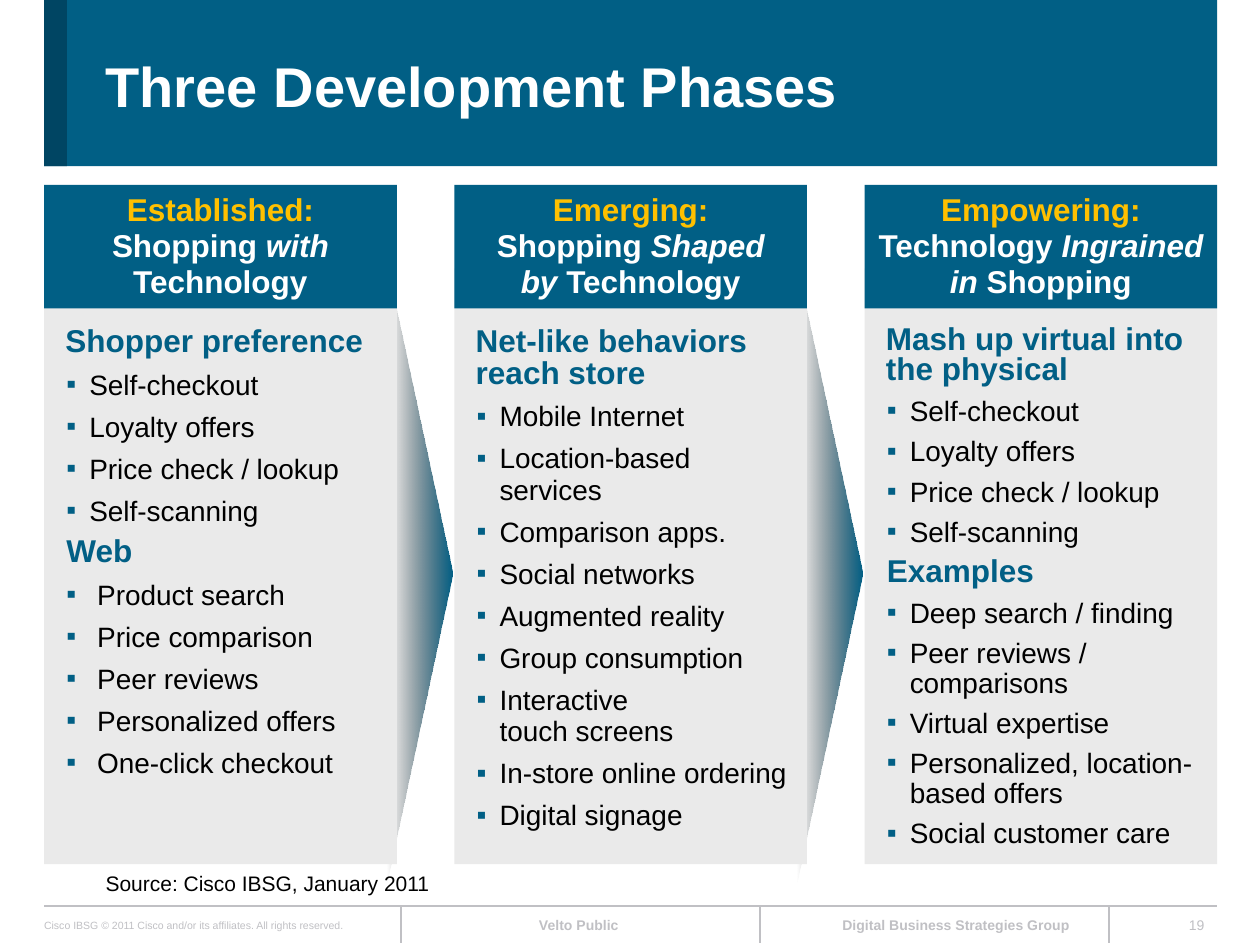
from dataclasses import dataclass

from lxml.etree import SubElement
from pptx import Presentation
from pptx.dml.color import RGBColor
from pptx.enum.shapes import MSO_CONNECTOR as Connector, MSO_SHAPE as Shape
from pptx.enum.text import MSO_ANCHOR as Anchor, MSO_AUTO_SIZE as AutoSize, PP_ALIGN as Align
from pptx.oxml.ns import qn
from pptx.util import Cm, Pt


@dataclass(frozen=True)
class Theme:
    font: str = "Arial"
    blue: str = "015F85"
    navy: str = "004563"
    panel: str = "EAEAEA"
    gold: str = "FFC000"
    white: str = "FFFFFF"
    black: str = "000000"
    grey: str = "C0C0C4"
    title_size: int = 32
    heading_size: int = 18
    item_size: int = 16
    source_size: int = 12
    footer_size: int = 8
    legal_size: int = 6


THEME = Theme()

# Column grid, in centimetres
LEFT, FULL_WIDTH = 0.89, 23.65
COLUMN_WIDTH, PITCH = 7.11, 8.27
HEAD_TOP, HEAD_HEIGHT = 3.73, 2.49
PANEL_TOP, PANEL_HEIGHT = 5.41, 12.01
HANGING = 0.46
LIST_INSETS = (0.23, 0.1, 0.23, 0.1)
HEAD_INSETS = (0.23, 0.25, 0.23, 0.1)
NO_INSETS = (0, 0, 0, 0)

# Each phase: heading runs (text, colour, italic), heading width, list height,
# line pitch in points, and groups of (subheading, text indent, items)
SHOPPER_ITEMS = ["Self-checkout", "Loyalty offers", "Price check / lookup", "Self-scanning"]
PHASES = [
    ([("Established: ", THEME.gold, False), ("Shopping ", THEME.white, False),
      ("with ", THEME.white, True), ("Technology", THEME.white, False)],
     7.09, 9.42, 18,
     [("Shopper preference", 0.48, SHOPPER_ITEMS),
      ("Web", 0.64, ["Product search", "Price comparison", "Peer reviews",
                     "Personalized offers", "One-click checkout"])]),
    ([("Emerging:", THEME.gold, False), (" Shopping ", THEME.white, False),
      ("Shaped by ", THEME.white, True), ("Technology", THEME.white, False)],
     6.58, 10.49, 18,
     [("Net-like behaviors reach store", 0.48,
       ["Mobile Internet", "Location-based\nservices", "Comparison apps.",
        "Social networks", "Augmented reality", "Group consumption",
        "Interactive\ntouch screens", "In-store online ordering", "Digital signage"])]),
    ([("Empowering: ", THEME.gold, False), ("Technology ", THEME.white, False),
      ("Ingrained in", THEME.white, True), (" Shopping", THEME.white, False)],
     7.65, 10.85, 17,
     [("Mash up virtual into the physical", 0.48, SHOPPER_ITEMS),
      ("Examples", 0.48, ["Deep search / finding", "Peer reviews / comparisons",
                          "Virtual expertise", "Personalized, location-based offers",
                          "Social customer care"])]),
]


def rgb(colour):
    return RGBColor.from_string(colour)


def write(paragraph, text, size, colour, bold=False, italic=False):
    """Add formatted text to a paragraph; a newline becomes a line break."""
    for number, line in enumerate(text.split("\n")):
        if number:
            paragraph.add_line_break()
        run = paragraph.add_run()
        run.text = line
        run.font.name, run.font.size = THEME.font, Pt(size)
        run.font.bold, run.font.italic = bold, italic
        run.font.color.rgb = rgb(colour)


def prepare_frame(holder, insets, anchor=Anchor.TOP, wrap=True):
    frame = holder.text_frame
    frame.word_wrap, frame.auto_size = wrap, AutoSize.NONE
    frame.vertical_anchor = anchor
    (frame.margin_left, frame.margin_top,
     frame.margin_right, frame.margin_bottom) = map(Cm, insets)
    return frame


def add_label(slide, box, insets=NO_INSETS, align=Align.LEFT, **layout):
    """Add a text box and return its only paragraph."""
    label = slide.shapes.add_textbox(*map(Cm, box))
    paragraph = prepare_frame(label, insets, **layout).paragraphs[0]
    paragraph.alignment = align
    return paragraph


def add_block(slide, box, colour):
    block = slide.shapes.add_shape(Shape.RECTANGLE, *map(Cm, box))
    block.shadow.inherit = False
    block.fill.solid()
    block.fill.fore_color.rgb = rgb(colour)
    block.line.fill.background()


def add_rule(slide, x1, y1, x2, y2):
    rule = slide.shapes.add_connector(Connector.STRAIGHT, *map(Cm, (x1, y1, x2, y2)))
    rule.line.color.rgb, rule.line.width = rgb(THEME.grey), Pt(1)
    SubElement(rule.element.spPr, qn("a:effectLst"))


def add_arrow(slide, left):
    """Add a right-pointing triangle that fades out towards its base."""
    arrow = slide.shapes.add_shape(Shape.ISOSCELES_TRIANGLE,
                                   Cm(left), Cm(10.9), Cm(12.45), Cm(1.32))
    arrow.rotation = 90
    arrow.shadow.inherit = False
    arrow.line.fill.background()
    arrow.fill.gradient()
    arrow.fill.gradient_angle = 270
    for stop, colour in zip(arrow.fill.gradient_stops, (THEME.blue, THEME.black)):
        stop.color.rgb = rgb(colour)
    faded = arrow.element.spPr.findall(".//" + qn("a:srgbClr"))[-1]
    SubElement(faded, qn("a:alpha"), val="0")


def place(placeholder, box):
    """Move a placeholder and bring it to the front."""
    (placeholder.left, placeholder.top,
     placeholder.width, placeholder.height) = map(Cm, box)
    placeholder.element.getparent().append(placeholder.element)


def set_bullet(paragraph, indent, hanging, bulleted):
    properties = paragraph._p.get_or_add_pPr()
    properties.set("marL", str(Cm(indent)))
    properties.set("indent", str(-Cm(hanging)))
    if bulleted:
        colour = SubElement(properties, qn("a:buClr"))
        SubElement(colour, qn("a:srgbClr"), val=THEME.blue)
        SubElement(properties, qn("a:buFont"), typeface=THEME.font)
        SubElement(properties, qn("a:buChar"), char="▪")
    else:
        SubElement(properties, qn("a:buNone"))


def fill_list(body, groups, line_pitch):
    frame = prepare_frame(body, LIST_INSETS)

    def add_line(text, indent, hanging, bulleted, **style):
        first = not frame.paragraphs[0].runs
        line = frame.paragraphs[0] if first else frame.add_paragraph()
        line.level = 0 if first else 1
        line.alignment = Align.LEFT
        line.line_spacing, line.space_before = Pt(line_pitch), Pt(0 if first else 6)
        set_bullet(line, indent, hanging, bulleted)
        write(line, text, **style)

    for number, (subheading, indent, items) in enumerate(groups):
        add_line(subheading, 0.02 if number else 0, 0, False,
                 size=THEME.heading_size, colour=THEME.blue, bold=True)
        for item in items:
            add_line(item, indent, indent - 0.48 + HANGING, True,
                     size=THEME.item_size, colour=THEME.black)


def add_phase(slide, body, left, heading, heading_width, list_height, line_pitch, groups):
    add_block(slide, (left, PANEL_TOP, COLUMN_WIDTH, PANEL_HEIGHT), THEME.panel)
    add_block(slide, (left, HEAD_TOP, COLUMN_WIDTH, HEAD_HEIGHT), THEME.blue)
    heading_left = left + (COLUMN_WIDTH - heading_width) / 2
    phase_name = add_label(slide, (heading_left, 4.03, heading_width, 1.75),
                           HEAD_INSETS, Align.CENTER, anchor=Anchor.MIDDLE)
    phase_name.line_spacing = 0.95
    for text, colour, italic in heading:
        write(phase_name, text, THEME.heading_size, colour, bold=True, italic=italic)
    place(body, (left + 0.2, 6.5, 7.16, list_height))
    fill_list(body, groups, line_pitch)


def add_footer(slide):
    add_rule(slide, LEFT, 18.26, LEFT + FULL_WIDTH, 18.26)
    for x in (8.08, 15.32, 22.35):
        add_rule(slide, x, 18.26, x, 19)
    entries = [
        ("Cisco IBSG © 2011 Cisco and/or its affiliates. All rights reserved.",
         (LEFT, 18.52, 6.76, 0.25), Align.LEFT, THEME.legal_size, False, True),
        ("Velto Public", (8.38, 18.49, 6.58, 0.33), Align.CENTER, THEME.footer_size, True, True),
        ("Digital Business Strategies Group", (16.28, 18.47, 5.99, 0.36),
         Align.CENTER, THEME.footer_size, True, True),
        ("19", (22.81, 18.36, 1.47, 0.56), Align.RIGHT, THEME.footer_size, False, False),
    ]
    for text, box, align, size, bold, wrap in entries:
        entry = add_label(slide, box, align=align, anchor=Anchor.MIDDLE, wrap=wrap)
        write(entry, text, size, THEME.grey, bold=bold)


def main():
    deck = Presentation()
    deck.slide_width, deck.slide_height = Cm(25.4), Cm(19.05)
    slide = deck.slides.add_slide(deck.slide_layouts.get_by_name("Comparison"))
    title, *bodies, spare = slide.placeholders
    spare.element.getparent().remove(spare.element)

    # Title banner
    add_block(slide, (LEFT, 0, FULL_WIDTH, 3.35), THEME.blue)
    add_block(slide, (LEFT, 0, 0.46, 3.35), THEME.navy)
    place(title, (1.88, 0.13, 22.86, 3.18))
    headline = prepare_frame(title, (0.25, 0.13, 0.25, 0.13), Anchor.MIDDLE).paragraphs[0]
    headline.alignment = Align.LEFT
    write(headline, "Three Development Phases", THEME.title_size, THEME.white, bold=True)

    # Arrows between the phases, then the phases
    for gap in range(len(PHASES) - 1):
        add_arrow(slide, 2.24 + gap * PITCH)
    for column, (body, phase) in enumerate(zip(bodies, PHASES)):
        add_phase(slide, body, LEFT + column * PITCH, *phase)

    # Source and footer
    source = add_label(slide, (1.88, 17.42, 18.72, 0.76), (0.25, 0.13, 0.25, 0.13))
    write(source, "Source: Cisco IBSG, January 2011", THEME.source_size, THEME.black)
    add_footer(slide)
    deck.save("out.pptx")


if __name__ == "__main__":
    main()
